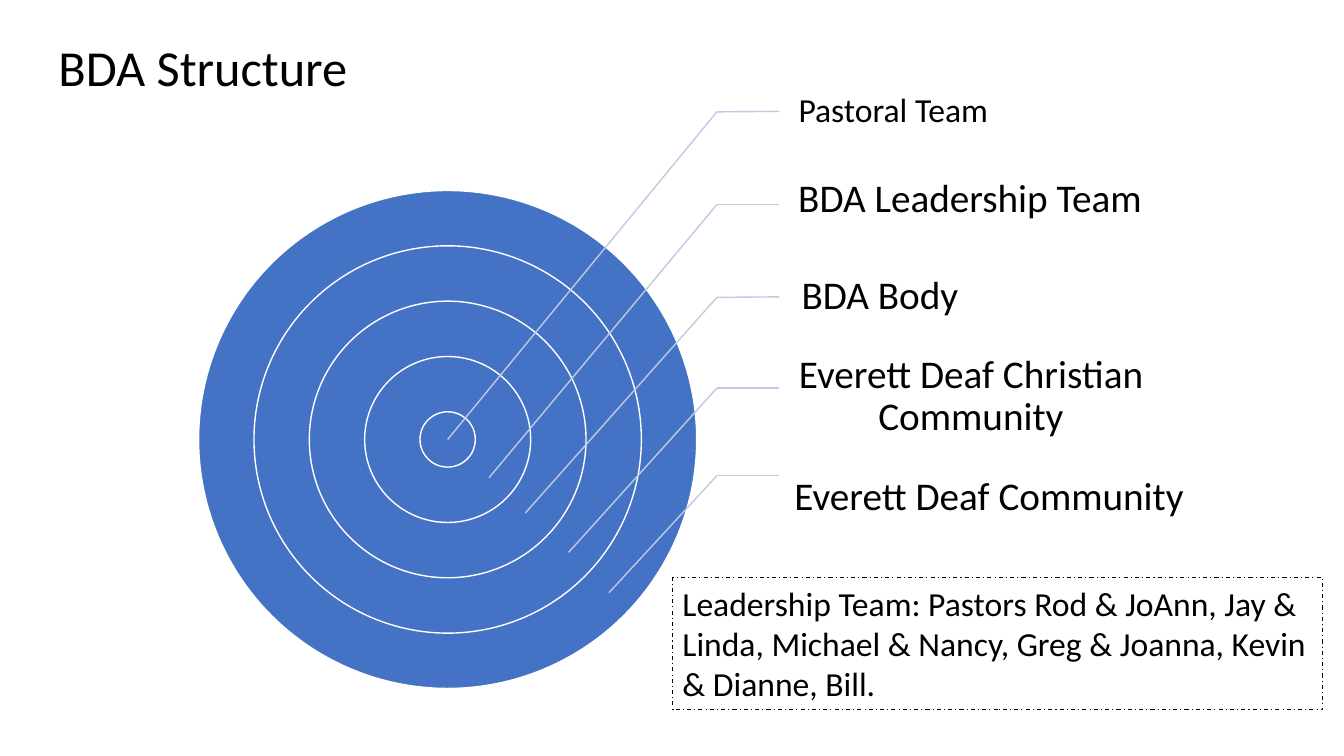
from dataclasses import dataclass
from lxml import etree
from pptx import Presentation
from pptx.dml.color import RGBColor
from pptx.enum.dml import MSO_LINE
from pptx.enum.shapes import MSO_CONNECTOR, MSO_SHAPE
from pptx.enum.text import MSO_ANCHOR, MSO_AUTO_SIZE, PP_ALIGN
from pptx.oxml.ns import qn
from pptx.util import Inches, Pt

LEFT, CENTER = PP_ALIGN.LEFT, PP_ALIGN.CENTER
TOP, MIDDLE = MSO_ANCHOR.TOP, MSO_ANCHOR.MIDDLE
OVAL, RECT = MSO_SHAPE.OVAL, MSO_SHAPE.RECTANGLE
STRAIGHT = MSO_CONNECTOR.STRAIGHT
DASH_DOT = MSO_LINE.DASH_DOT
NO_FIT = MSO_AUTO_SIZE.NONE

TITLE = "BDA Structure"
# text, label left, top, width, size name, alignment, leader height, ring point
LABELS = [
    ("Pastoral Team", 7.73, 0.67, 2.47, "small", LEFT, 1.11, (4.44, 4.36)),
    ("BDA Leadership Team", 7.69, 1.55, 3.68, "large", CENTER, 2.03, (4.85, 4.74)),
    ("BDA Body", 7.73, 2.51, 2.47, "large", LEFT, 2.95, (5.21, 5.09)),
    ("Everett Deaf Christian Community", 7.55, 3.5, 3.98, "large", CENTER,
     3.85, (5.64, 5.48)),
    ("Everett Deaf Community", 7.66, 4.5, 4.79, "large", LEFT, 4.72, (6.04, 5.88)),
]
TEAM = [
    "Leadership Team: Pastors Rod & JoAnn, Jay &",
    "Linda, Michael & Nancy, Greg & Joanna, Kevin",
    "& Dianne, Bill.",
]

HUB = (4.44, 4.36)
OUTER = 4.94
RINGS = 5
BEND, END = 7.11, 7.73
LABEL_H = 0.87


@dataclass(frozen=True)
class Theme:
    font: str = "Calibri"
    ink: RGBColor = RGBColor(0x00, 0x00, 0x00)
    ring: RGBColor = RGBColor(0x44, 0x72, 0xC4)
    edge: RGBColor = RGBColor(0xFF, 0xFF, 0xFF)
    leader: RGBColor = RGBColor(0xC1, 0xC9, 0xE4)
    title: int = 36
    large: int = 28
    small: int = 24


THEME = Theme()


def write(shape, lines, size, align=LEFT, anchor=TOP, space=1.0,
          pads=(0.1, 0.05, 0.1, 0.05), wrap=True):
    """Fill a shape with one paragraph per line; pads run left, top, right, bottom."""
    frame = shape.text_frame
    frame.auto_size = NO_FIT
    frame.word_wrap = wrap
    frame.vertical_anchor = anchor
    (frame.margin_left, frame.margin_top,
     frame.margin_right, frame.margin_bottom) = map(Inches, pads)
    for i, line in enumerate(lines):
        para = frame.add_paragraph() if i else frame.paragraphs[0]
        para.alignment = align
        para.line_spacing = space
        run = para.add_run()
        run.text = line
        run.font.name = THEME.font
        run.font.size = Pt(size)
        run.font.color.rgb = THEME.ink


def add_title(slide):
    title = slide.shapes.title
    title.left, title.top = Inches(0.48), Inches(0.31)
    title.width, title.height = Inches(4.21), Inches(0.71)
    write(title, [TITLE], THEME.title)


def add_rings(slide):
    """Draw the rings from the outside in, each one band narrower."""
    for i in range(RINGS):
        size = OUTER * (2 * (RINGS - i) - 1) / (2 * RINGS - 1)
        left, top = (c - size / 2 for c in HUB)
        ring = slide.shapes.add_shape(
            OVAL, Inches(left), Inches(top), Inches(size), Inches(size))
        ring.shadow.inherit = False
        ring.fill.solid()
        ring.fill.fore_color.rgb = THEME.ring
        ring.line.color.rgb = THEME.edge
        ring.line.width = Pt(1)


def add_line(slide, start, end):
    line = slide.shapes.add_connector(STRAIGHT, *map(Inches, (*start, *end)))
    line.line.color.rgb = THEME.leader
    line.line.width = Pt(1)
    etree.SubElement(line._element.spPr, qn("a:effectLst"))
    return line


def add_label(slide, text, left, top, width, size, align, level, point):
    box = slide.shapes.add_textbox(
        Inches(left), Inches(top), Inches(width), Inches(LABEL_H))
    small = size == "small"
    pad = 0.03 if small else 0.04
    write(box, [text], getattr(THEME, size), align=align, anchor=MIDDLE,
          space=0.9, pads=(0.19 if small else 0.22, pad, pad, pad))
    bend = (BEND, level)
    flat = add_line(slide, bend, (END, level))
    if left == END and abs(top + LABEL_H / 2 - level) < 0.01:
        flat.end_connect(box, 1)
    add_line(slide, bend, point)


def add_team(slide):
    box = slide.shapes.add_shape(
        RECT, Inches(6.67), Inches(5.73), Inches(6.45), Inches(1.31))
    box.shadow.inherit = False
    box.fill.background()
    box.line.color.rgb = THEME.ink
    box.line.width = Pt(0.75)
    box.line.dash_style = DASH_DOT
    write(box, TEAM, THEME.small, wrap=False)


def main():
    deck = Presentation()
    deck.slide_width, deck.slide_height = Inches(13.33), Inches(7.5)
    slide = deck.slides.add_slide(deck.slide_layouts[5])
    add_title(slide)
    add_rings(slide)
    for label in LABELS:
        add_label(slide, *label)
    add_team(slide)
    deck.save("out.pptx")


if __name__ == "__main__":
    main()
